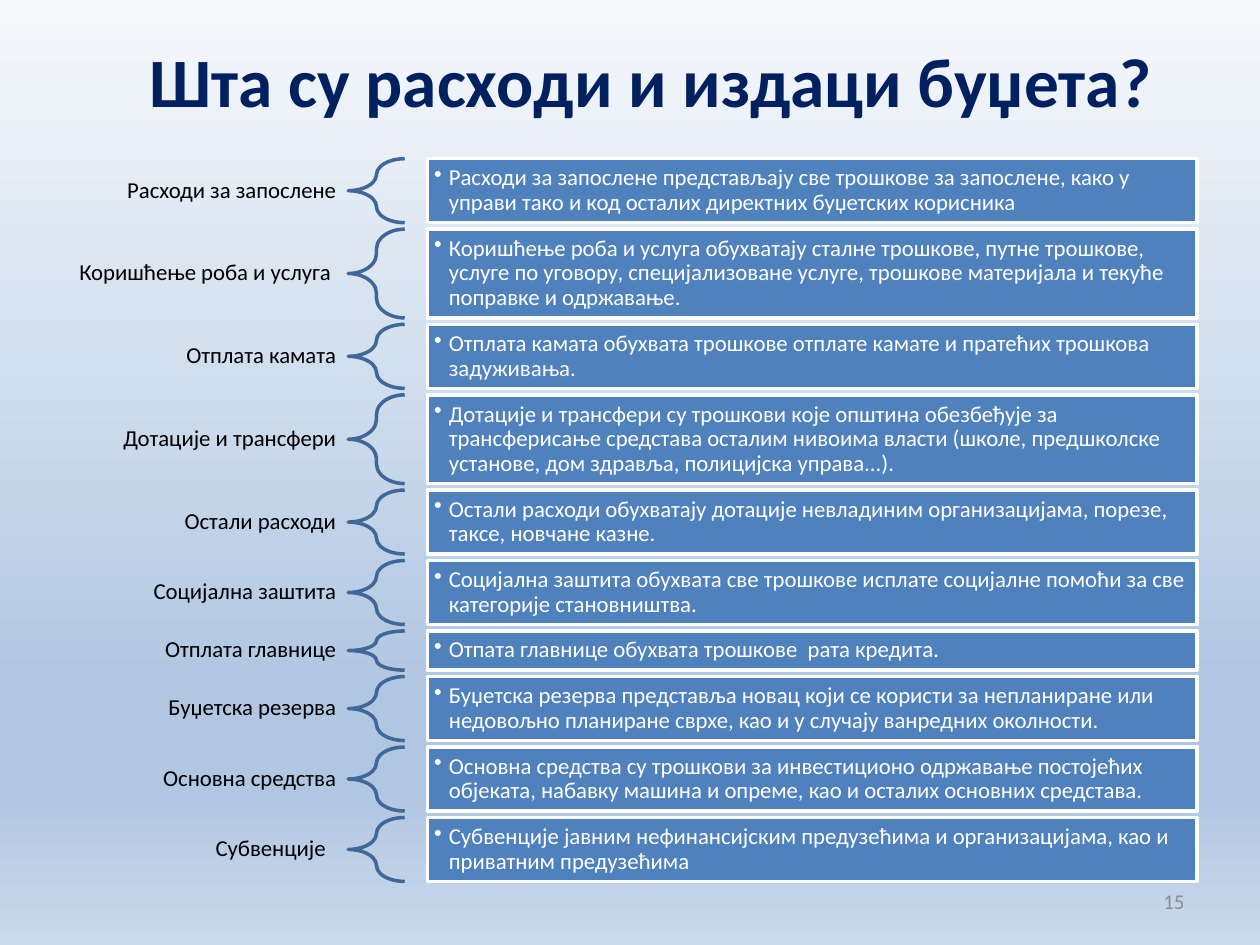
from dataclasses import dataclass

from lxml.etree import SubElement
from pptx import Presentation
from pptx.dml.color import RGBColor
from pptx.enum.shapes import MSO_SHAPE
from pptx.enum.text import MSO_ANCHOR, PP_ALIGN
from pptx.oxml.ns import qn
from pptx.shapes.autoshape import Shape
from pptx.slide import Slide
from pptx.util import Cm, Pt


@dataclass(frozen=True)
class Theme:
    font: str = "Calibri"
    title: str = "002060"
    label: str = "000000"
    brace: str = "3F6797"
    box: str = "4F81BD"
    white: str = "FFFFFF"
    number: str = "8C8C8C"
    title_size: float = 39.6
    body_size: float = 13
    number_size: float = 12
    line_width: float = 2
    background: tuple = ((0, "F6F9FC"), (74, "B0C6E1"), (83, "B0C6E1"), (100, "CAD9EB"))


@dataclass(frozen=True)
class Area:
    """Position and size in centimetres."""
    left: float
    top: float
    width: float
    height: float

    def lengths(self) -> tuple:
        return Cm(self.left), Cm(self.top), Cm(self.width), Cm(self.height)


@dataclass(frozen=True)
class Expense:
    name: str
    description: str
    lines: int = 2

    @property
    def height(self) -> float:
        return 0.29 + 0.5 * self.lines


THEME = Theme()
FIRST_TOP, ROW_GAP, LABEL_HEIGHT = 3.2, 0.13, 0.71
EXPENSES = (
    Expense("Расходи за запослене", "Расходи за запослене представљају све трошкове за запослене, "
            "како у управи тако и код осталих директних буџетских корисника"),
    Expense("Коришћење роба и услуга ", "Коришћење роба и услуга обухватају сталне трошкове, "
            "путне трошкове, услуге по уговору, специјализоване услуге, трошкове материјала "
            "и текуће поправке и одржавање.", 3),
    Expense("Отплата камата", "Отплата камата обухвата трошкове отплате камате "
            "и пратећих трошкова задуживања."),
    Expense("Дотације и трансфери", "Дотације и трансфери су трошкови које општина обезбеђује "
            "за трансферисање средстава осталим нивоима власти (школе, предшколске установе, "
            "дом здравља, полицијска управа...).", 3),
    Expense("Остали расходи", "Остали расходи обухватају дотације невладиним организацијама, "
            "порезе, таксе, новчане казне."),
    Expense("Социјална заштита", "Социјална заштита обухвата све трошкове исплате "
            "социјалне помоћи за све категорије становништва."),
    Expense("Отплата главнице", "Отпата главнице обухвата трошкове  рата кредита.", 1),
    Expense("Буџетска резерва", "Буџетска резерва представља новац који се користи за "
            "непланиране или недовољно планиране сврхе, као и у случају ванредних околности."),
    Expense("Основна средства", "Основна средства су трошкови за инвестиционо одржавање "
            "постојећих објеката, набавку машина и опреме, као и осталих основних средстава."),
    Expense("Субвенције  ", "Субвенције јавним нефинансијским предузећима и организацијама, "
            "као и приватним предузећима"),
)


def set_background(slide: Slide) -> None:
    fill = slide.background.fill
    fill.gradient()
    fill.gradient_angle = 270
    stops = slide.element.find(".//" + qn("a:gsLst"))
    for stop in list(stops):
        stops.remove(stop)
    for position, color in THEME.background:
        stop = SubElement(stops, qn("a:gs"), pos=str(position * 1000))
        SubElement(stop, qn("a:srgbClr"), val=color)


def set_text(shape: Shape, text: str, size: float, color: str, align: PP_ALIGN,
             margins: tuple = (0.25, 0.13), bold: bool = False, spacing: float = 1) -> None:
    frame = shape.text_frame
    frame.text = text
    frame.word_wrap = True
    frame.vertical_anchor = MSO_ANCHOR.MIDDLE
    frame.margin_left = frame.margin_right = Cm(margins[0])
    frame.margin_top = frame.margin_bottom = Cm(margins[1])
    paragraph = frame.paragraphs[0]
    paragraph.alignment = align
    paragraph.line_spacing = spacing
    font = paragraph.runs[0].font
    font.name, font.size, font.bold = THEME.font, Pt(size), bold
    font.color.rgb = RGBColor.from_string(color)


def add_bullet(shape: Shape) -> None:
    properties = shape.text_frame.paragraphs[0]._p.get_or_add_pPr()
    properties.set("marL", str(Cm(0.3)))
    properties.set("indent", str(-Cm(0.3)))
    SubElement(properties, qn("a:buChar"), char="•")


def add_outlined(slide: Slide, kind: MSO_SHAPE, area: Area, line: str) -> Shape:
    shape = slide.shapes.add_shape(kind, *area.lengths())
    shape.shadow.inherit = False
    shape.line.color.rgb = RGBColor.from_string(line)
    shape.line.width = Pt(THEME.line_width)
    return shape


def add_expense(slide: Slide, expense: Expense, top: float) -> None:
    # Label, centred on its row
    label_top = top + (expense.height - LABEL_HEIGHT) / 2
    label = slide.shapes.add_textbox(*Area(1.32, label_top, 5.7, LABEL_HEIGHT).lengths())
    set_text(label, expense.name, THEME.body_size, THEME.label, PP_ALIGN.RIGHT,
             margins=(0.25, 0.1), spacing=0.9)

    # Brace
    brace = add_outlined(slide, MSO_SHAPE.LEFT_BRACE,
                         Area(7.02, top, 1.14, expense.height), THEME.brace)
    brace.fill.background()
    brace.adjustments[0] = 0.35

    # Description box
    box = add_outlined(slide, MSO_SHAPE.RECTANGLE,
                       Area(8.62, top, 15.51, expense.height), THEME.white)
    box.fill.solid()
    box.fill.fore_color.rgb = RGBColor.from_string(THEME.box)
    set_text(box, expense.description, THEME.body_size, THEME.white, PP_ALIGN.LEFT,
             margins=(0.13, 0.13), spacing=0.9)
    add_bullet(box)


def main() -> None:
    presentation = Presentation()
    presentation.slide_width, presentation.slide_height = Cm(25.4), Cm(19.05)
    slide = presentation.slides.add_slide(presentation.slide_layouts[6])
    set_background(slide)

    # Slide number and title
    number = slide.shapes.add_textbox(*Area(18.2, 17.66, 5.93, 1.01).lengths())
    set_text(number, "15", THEME.number_size, THEME.number, PP_ALIGN.RIGHT)
    title = slide.shapes.add_textbox(*Area(1.7, 0.74, 22.86, 1.73).lengths())
    set_text(title, "Шта су расходи и издаци буџета?", THEME.title_size, THEME.title,
             PP_ALIGN.CENTER, bold=True)

    # Expense rows
    top = FIRST_TOP
    for expense in EXPENSES:
        add_expense(slide, expense, top)
        top += expense.height + ROW_GAP

    presentation.save("out.pptx")


if __name__ == "__main__":
    main()
